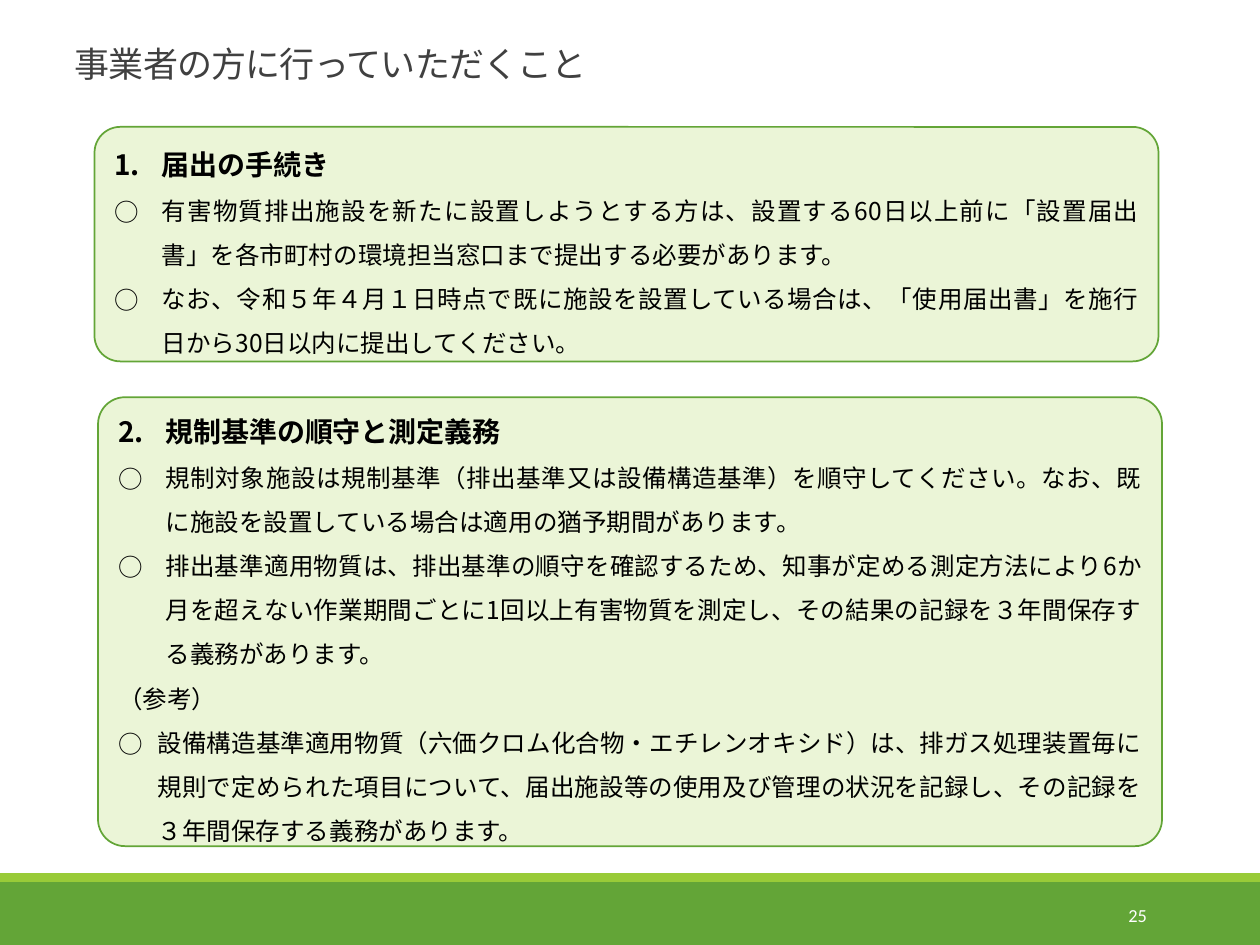
from lxml.etree import SubElement
from pptx import Presentation
from pptx.dml.color import RGBColor
from pptx.enum.shapes import MSO_SHAPE
from pptx.enum.text import MSO_ANCHOR, PP_ALIGN
from pptx.oxml.ns import qn
from pptx.util import Pt

THEME = {
    "green": RGBColor.from_string("63A537"),
    "lime": RGBColor.from_string("99CB38"),
    "pale": RGBColor.from_string("EBF5D7"),
    "white": RGBColor.from_string("FFFFFF"),
    "black": RGBColor.from_string("000000"),
    "grey": RGBColor.from_string("404040"),
    "font": "Noto Sans CJK JP",
    "number_font": "Calibri",
    "title": Pt(20),
    "heading": Pt(16),
    "body": Pt(14),
    "number": Pt(10.5),
}
INDENT = 27
SECTIONS = [
    {
        "place": (54, 72.5, 608, 134),
        "corner": 0.11,
        "heading": "届出の手続き",
        "lines": [
            ("○", INDENT, "有害物質排出施設を新たに設置しようとする方は、設置する60日以上前に「設置届出書」を各市町村の環境担当窓口まで提出する必要があります。"),
            ("○", INDENT, "なお、令和５年４月１日時点で既に施設を設置している場合は、「使用届出書」を施行日から30日以内に提出してください。"),
        ],
    },
    {
        "place": (56, 227, 608, 256.5),
        "corner": 0.06,
        "heading": "規制基準の順守と測定義務",
        "lines": [
            ("○", INDENT, "規制対象施設は規制基準（排出基準又は設備構造基準）を順守してください。なお、既に施設を設置している場合は適用の猶予期間があります。"),
            ("○", INDENT, "排出基準適用物質は、排出基準の順守を確認するため、知事が定める測定方法により6か月を超えない作業期間ごとに1回以上有害物質を測定し、その結果の記録を３年間保存する義務があります。"),
            (None, 0, "（参考）"),
            ("○", 22.5, "設備構造基準適用物質（六価クロム化合物・エチレンオキシド）は、排ガス処理装置毎に規則で定められた項目について、届出施設等の使用及び管理の状況を記録し、その記録を３年間保存する義務があります。"),
        ],
    },
]


def add_span(para, text, color, **formats):
    """Add a run whose Latin and East Asian fonts match; return it."""
    span = para.add_run()
    span.text = text
    for name, value in ({"name": THEME["font"]} | formats).items():
        setattr(span.font, name, value)
    span.font.color.rgb = color
    east_asian = SubElement(span.font._element, qn("a:ea"))
    east_asian.set("typeface", span.font.name)
    return span


def add_block(kind, place, fill):
    block = page.shapes.add_shape(kind, *map(Pt, place))
    block.shadow.inherit = False
    block.fill.solid()
    block.fill.fore_color.rgb = fill
    block.line.fill.background()
    return block


deck = Presentation()
deck.slide_width, deck.slide_height = Pt(720), Pt(540)
page = deck.slides.add_slide(deck.slide_layouts[5])

# Footer bands and page number
add_block(MSO_SHAPE.RECTANGLE, (0, 504, 720, 36), THEME["green"])
add_block(MSO_SHAPE.RECTANGLE, (0, 499, 720, 5), THEME["lime"])
number_box = page.shapes.add_textbox(Pt(584.5), Pt(508.5), Pt(78), Pt(29))
number_box.text_frame.word_wrap = True
number_box.text_frame.vertical_anchor = MSO_ANCHOR.MIDDLE
number_para = number_box.text_frame.paragraphs[0]
number_para.alignment = PP_ALIGN.RIGHT
add_span(number_para, "25", THEME["white"],
         name=THEME["number_font"], size=THEME["number"])

# Title
title = page.shapes.title
title.left, title.top, title.width, title.height = map(Pt, (35.5, 1, 594, 51))
title.text_frame.vertical_anchor = MSO_ANCHOR.BOTTOM
title_para = title.text_frame.paragraphs[0]
title_para.alignment = PP_ALIGN.LEFT
title_para.line_spacing = 0.85
title_span = add_span(title_para, "事業者の方に行っていただくこと", THEME["grey"],
                      size=THEME["title"])
title_span.font._element.set("spc", "-50")

# Numbered sections
for number, section in enumerate(SECTIONS, 1):
    box = add_block(MSO_SHAPE.ROUNDED_RECTANGLE, section["place"], THEME["pale"])
    box.adjustments[0] = section["corner"]
    box.line.color.rgb = THEME["green"]
    box.line.width = Pt(1)
    frame = box.text_frame
    frame.word_wrap = True
    frame.vertical_anchor = MSO_ANCHOR.MIDDLE
    lines = [("number", INDENT, section["heading"]), *section["lines"]]
    for index, (bullet, indent, text) in enumerate(lines):
        para = frame.add_paragraph() if index else frame.paragraphs[0]
        para.alignment = PP_ALIGN.JUSTIFY
        para.line_spacing = 1.5
        is_heading = bullet == "number"
        add_span(para, text, THEME["black"], bold=is_heading,
                 size=THEME["heading" if is_heading else "body"])
        if not bullet:
            continue
        properties = para._p.get_or_add_pPr()
        properties.set("marL", str(Pt(indent)))
        properties.set("indent", str(-Pt(indent)))
        if is_heading:
            numbering = SubElement(properties, qn("a:buAutoNum"))
            numbering.set("type", "arabicPeriod")
            numbering.set("startAt", str(number))
        else:
            SubElement(properties, qn("a:buFont")).set("typeface", THEME["font"])
            SubElement(properties, qn("a:buChar")).set("char", bullet)

deck.save("out.pptx")
